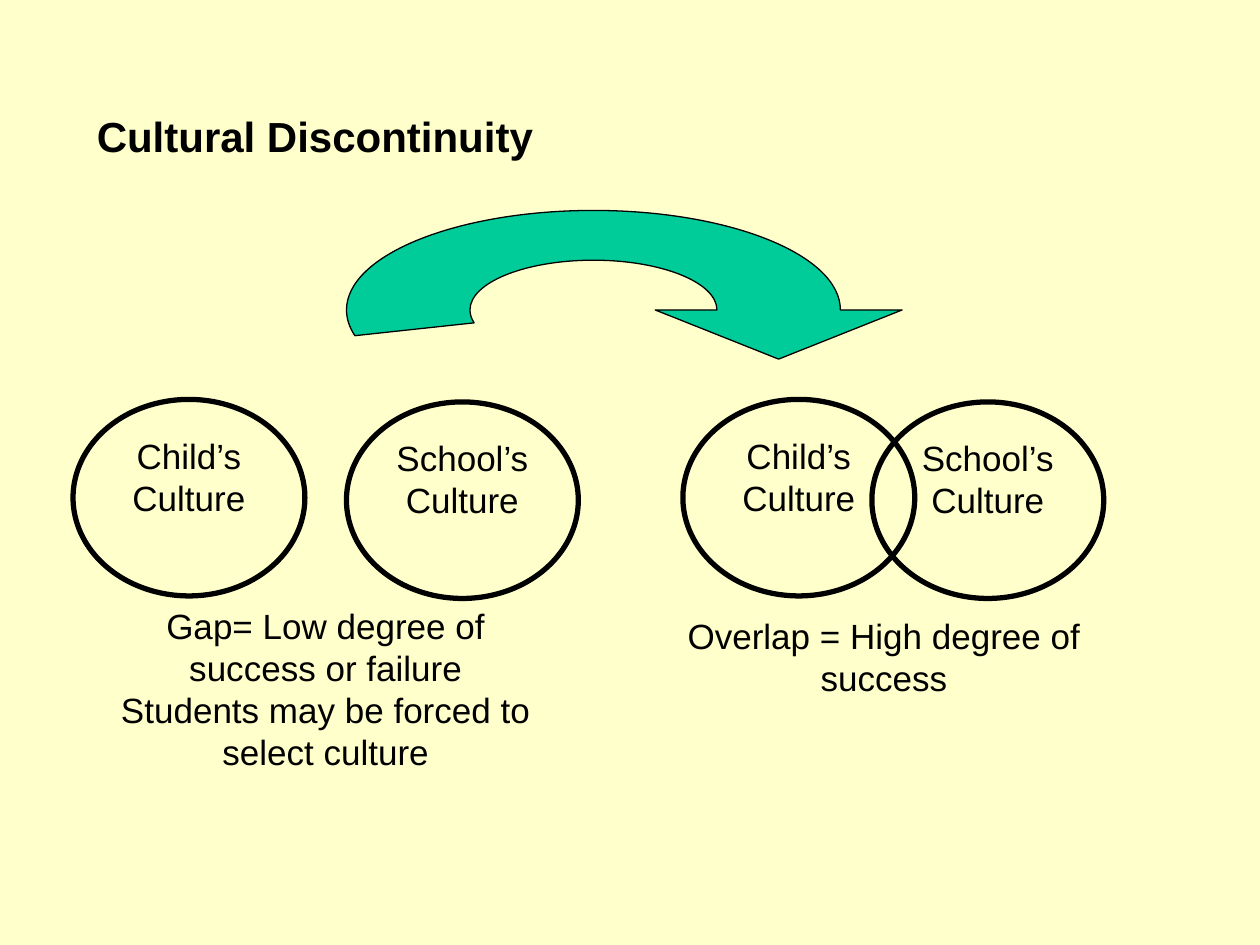
from math import cos, radians, sin, tan

from lxml.etree import SubElement
from pptx import Presentation
from pptx.dml.color import RGBColor
from pptx.enum.shapes import MSO_SHAPE as SHAPE
from pptx.enum.text import MSO_ANCHOR as ANCHOR, PP_ALIGN as ALIGN
from pptx.oxml.ns import qn
from pptx.util import Inches, Pt

THEME = {
    "bg": RGBColor.from_string("FFFFCC"),
    "ink": RGBColor.from_string("000000"),
    "arrow": RGBColor.from_string("00CC99"),
    "font": "Arial",
    "title": Pt(24),
    "body": Pt(20),
    "ring_line": Pt(3),
    "arrow_line": Pt(0.75),
}

TITLE = ["Cultural Discontinuity"]
TITLE_BOX = (0.67, 0.83, 8.5, 5.92)

CHILD = ["Child’s", "Culture"]
SCHOOL = ["School’s Culture"]
RING_SIZE = (1.84, 1.56)
CHILD_TOP, SCHOOL_TOP = 3.17, 3.19

# Each pair: left edges of the two rings, caption box, caption paragraphs
PAIRS = [
    (0.58, 2.75, (0.75, 4.75, 3.67, 0.78),
     ["Gap= Low degree of success or failure",
      "Students may be forced to select culture"]),
    (5.42, 6.92, (5.17, 4.83, 3.69, 0.78),
     ["Overlap = High degree of success"]),
]

ARROW = {"center": (4.71, 2.46), "outer": (1.96, 0.79), "angles": [0, 90, 180, 195],
         "head_half": 0.98, "head_height": 0.39}


def write(sp, lines, size, align=ALIGN.CENTER, bold=False, before=0):
    tf = sp.text_frame
    tf.word_wrap = True
    tf.vertical_anchor = ANCHOR.TOP
    for i, line in enumerate(lines):
        p = tf.paragraphs[0] if i == 0 else tf.add_paragraph()
        p.alignment = align
        p.space_before = Pt(before)
        r = p.add_run()
        r.text = line
        for name, value in {"name": THEME["font"], "size": size, "bold": bold}.items():
            setattr(r.font, name, value)
        r.font.color.rgb = THEME["ink"]


def add_text(shapes, box, lines, size, **fmt):
    write(shapes.add_textbox(*map(Inches, box)), lines, size, **fmt)


def outline(sp, width):
    sp.shadow.inherit = False
    sp.line.color.rgb = THEME["ink"]
    sp.line.width = width


def add_ring(shapes, left, top, lines):
    sp = shapes.add_shape(SHAPE.OVAL, *map(Inches, (left, top, *RING_SIZE)))
    sp.fill.background()
    outline(sp, THEME["ring_line"])
    write(sp, lines, THEME["body"])


def arc(share, angles):
    """Return Bezier triplets along the arrow's ellipse, scaled by share."""
    (cx, cy), (rx, ry) = ARROW["center"], ARROW["outer"]
    curves = []
    for start, end in zip(map(radians, angles), map(radians, angles[1:])):
        k = 4 / 3 * tan((end - start) / 4)
        unit = [(cos(start) - k * sin(start), sin(start) + k * cos(start)),
                (cos(end) + k * sin(end), sin(end) - k * cos(end)),
                (cos(end), sin(end))]
        curves.append([(cx + share * rx * x, cy - share * ry * y) for x, y in unit])
    return curves


def bend(sp, segments):
    """Join the line steps of each three-point segment into one Bezier curve."""
    steps = sp._element.iter(qn("a:lnTo"))
    steps = iter(list(steps))
    for segment in segments:
        group = [next(steps) for _ in segment]
        if len(group) == 3:
            curve = SubElement(group[0].getparent(), qn("a:cubicBezTo"))
            group[0].addprevious(curve)
            for step in group:
                curve.append(step[0])
                step.getparent().remove(step)


def add_curved_arrow(shapes):
    """Draw a half-ring band, its inner radii half the outer, with a head pointing down."""
    (cx, cy), (rx, ry) = ARROW["center"], ARROW["outer"]
    angles, half = ARROW["angles"], ARROW["head_half"]
    tail, tip_x = radians(angles[-1]), cx + 0.75 * rx
    corners = [(tip_x + half, cy), (tip_x, cy + ARROW["head_height"]), (tip_x - half, cy)]
    segments = [*arc(0.5, angles),
                [(cx + rx * cos(tail), cy - ry * sin(tail))],
                *arc(1, angles[::-1]),
                *[[corner] for corner in corners]]
    points = [(Inches(x), Inches(y)) for segment in segments for x, y in segment]
    builder = shapes.build_freeform(Inches(cx + rx / 2), Inches(cy))
    builder.add_line_segments(points, close=True)
    sp = builder.convert_to_shape()
    bend(sp, segments)
    sp.fill.solid()
    sp.fill.fore_color.rgb = THEME["arrow"]
    outline(sp, THEME["arrow_line"])


def main():
    prs = Presentation()
    prs.slide_width, prs.slide_height = Inches(10), Inches(7.5)
    slide = prs.slides.add_slide(prs.slide_layouts[6])
    slide.background.fill.solid()
    slide.background.fill.fore_color.rgb = THEME["bg"]

    add_text(slide.shapes, TITLE_BOX, TITLE, THEME["title"],
             align=ALIGN.LEFT, bold=True, before=4.8)
    for child_left, school_left, caption_box, caption in PAIRS:
        shapes = slide.shapes.add_group_shape().shapes
        add_ring(shapes, child_left, CHILD_TOP, CHILD)
        add_ring(shapes, school_left, SCHOOL_TOP, SCHOOL)
        add_text(shapes, caption_box, caption, THEME["body"])
    add_curved_arrow(slide.shapes)
    prs.save("out.pptx")


if __name__ == "__main__":
    main()
